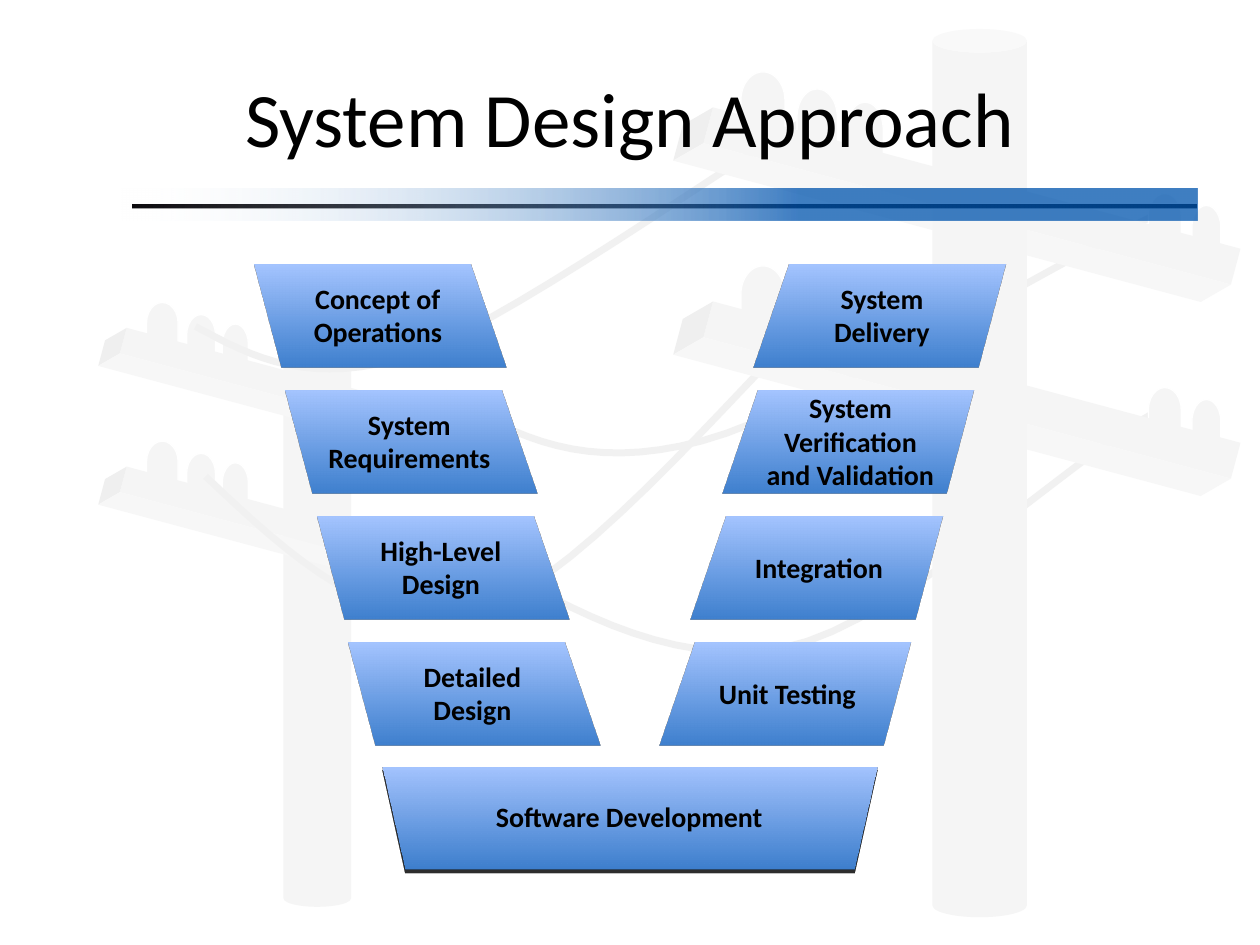
from dataclasses import dataclass

from lxml.etree import SubElement, fromstring
from pptx import Presentation
from pptx.dml.color import RGBColor
from pptx.enum.shapes import MSO_SHAPE as Shape
from pptx.enum.text import MSO_ANCHOR as Anchor, PP_ALIGN as Align
from pptx.oxml.ns import nsdecls, qn
from pptx.util import Inches, Pt

COLORS = {
    "white": "FFFFFF", "black": "000000", "pole": "BFBFBF", "wire": "A6A6A6",
    "rule": "08060A", "band": "0054AF", "step_dark": "3F80CE",
    "step_light": "A4C4FF", "step_edge": "4B7EBC",
}
STEP_FILL = [(0, "step_dark", 100), (100, "step_light", 100)]


@dataclass
class Pole:
    x: float  # left end of the lower arm
    y: float  # top of the lower arm
    scale: float
    post_in_front: bool


@dataclass
class Step:
    text: str
    x: float
    y: float
    flip: str


POLES = [Pole(0.77, 4.08, 0.715, False), Pole(5.33, 2.92, 1, True)]
# Offsets and sizes relative to the arm of a full-size pole
INSULATORS = [(0.5, -0.76, 0.45, 0.35), (0.93, -0.61, 0.45, 0.32),
              (1.31, -0.49, 0.45, 0.29), (3.74, 0.2, 0.35, 0.26),
              (4.07, 0.31, 0.35, 0.23)]
ARM_GAP = 1.54
# Each wire is a start point followed by two cubic curves
WIRES = [
    [(1.63, 3.78), (2.31, 4.42), (3, 5.07), (3.82, 4.84), (4.63, 4.62), (6.13, 2.75), (6.54, 2.45)],
    [(3.56, 4.27), (4.42, 4.79), (5.28, 5.31), (6.22, 5.14), (7.17, 4.96), (8.8, 3.37), (9.25, 3.24)],
    [(1.55, 2.59), (2.01, 2.84), (2.47, 3.08), (3.29, 2.81), (4.11, 2.53), (6.36, 0.89), (6.46, 0.93)],
    [(3.58, 3.16), (4.1, 3.46), (4.63, 3.75), (5.57, 3.5), (6.52, 3.25), (9, 1.72), (9.25, 1.68)],
]
LEFT_STEPS = ["Concept of Operations", "System Requirements", "High-Level Design", "Detailed Design"]
RIGHT_STEPS = ["System Delivery", "System Verification and Validation", "Integration", "Unit Testing"]


def rgb(name: str) -> RGBColor:
    return RGBColor.from_string(COLORS[name])


def set_alpha(sp, percent: float) -> None:
    color = sp._element.spPr.find(qn("a:solidFill"))[0]
    SubElement(color, qn("a:alpha")).set("val", str(int(percent * 1000)))


def set_gradient(sp, stops: list, angle: int) -> None:
    """Fill with (position %, colour name, opacity %) stops."""
    sp.fill.solid()
    items = "".join(
        f'<a:gs pos="{pos * 1000}"><a:srgbClr val="{COLORS[name]}">'
        f'<a:alpha val="{alpha * 1000}"/></a:srgbClr></a:gs>' for pos, name, alpha in stops)
    grad = fromstring(f'<a:gradFill {nsdecls("a")} rotWithShape="1"><a:gsLst>{items}</a:gsLst>'
                      f'<a:lin ang="{angle * 60000}" scaled="0"/></a:gradFill>')
    spPr = sp._element.spPr
    spPr.replace(spPr.find(qn("a:solidFill")), grad)


def add_shape(slide, kind, x: float, y: float, w: float, h: float, *,
              fill: str | None = None, line: str | None = None, rotation: float = 0, flip: str = ""):
    sp = slide.shapes.add_shape(kind, Inches(x), Inches(y), Inches(w), Inches(h))
    sp.shadow.inherit = False
    sp.rotation = rotation
    if fill:
        sp.fill.solid()
        sp.fill.fore_color.rgb = rgb(fill)
    if line:
        sp.line.color.rgb = rgb(line)
        sp.line.width = Pt(0.75)
    else:
        sp.line.fill.background()
    for axis in flip:
        sp._element.spPr.find(qn("a:xfrm")).set(f"flip{axis}", "1")
    return sp


def write(sp, text: str, *, size: float = 16, bold: bool = True, margin: float | None = None) -> None:
    tf = sp.text_frame
    tf.word_wrap = True
    tf.vertical_anchor = Anchor.MIDDLE
    if margin is not None:
        tf.margin_left = tf.margin_right = tf.margin_top = tf.margin_bottom = Inches(margin)
    p = tf.paragraphs[0]
    p.alignment = Align.CENTER
    r = p.add_run()
    r.text = text
    r.font.name, r.font.size, r.font.bold = "Calibri", Pt(size), bold
    r.font.color.rgb = rgb("black")


def add_text(slide, text: str, x: float, y: float, w: float, h: float, **fmt) -> None:
    write(slide.shapes.add_textbox(Inches(x), Inches(y), Inches(w), Inches(h)), text, **fmt)


def draw_post(slide, pole: Pole) -> None:
    s = pole.scale
    add_shape(slide, Shape.CAN, pole.x + 2.07 * s, pole.y - 2.69 * s, 0.75 * s, 7.05 * s, fill="pole")


def draw_pole(slide, pole: Pole) -> None:
    s = pole.scale
    if not pole.post_in_front:
        draw_post(slide, pole)
    for y in (pole.y, pole.y - ARM_GAP * s):
        for dx, dy, w, h in INSULATORS:
            add_shape(slide, Shape.FLOWCHART_DELAY, pole.x + dx * s, y + dy * s, w * s, h * s,
                      fill="pole", line="white", rotation=270)
        arm = add_shape(slide, Shape.CUBE, pole.x, y, 4.53 * s, 0.49 * s,
                        fill="pole", rotation=15, flip="HV")
        arm.adjustments[0] = 0.4
    if pole.post_in_front:
        draw_post(slide, pole)


def curve_point(a, b, c, d, t: float) -> tuple:
    u = 1 - t
    return tuple(Inches(u**3 * i + 3 * u * u * t * j + 3 * u * t * t * k + t**3 * m)
                 for i, j, k, m in zip(a, b, c, d))


def draw_wire(slide, points: list, steps: int = 16) -> None:
    builder = slide.shapes.build_freeform(*(Inches(v) for v in points[0]))
    builder.add_line_segments(
        [curve_point(*points[i:i + 4], n / steps) for i in (0, 3) for n in range(1, steps + 1)],
        close=False)
    sp = builder.convert_to_shape()
    sp.shadow.inherit = False
    sp.fill.background()
    sp.line.color.rgb = rgb("wire")
    sp.line.width = Pt(4)


def tilt(sp) -> None:
    """Lean the shape back with a perspective camera."""
    sp._element.spPr.append(fromstring(
        f'<a:scene3d {nsdecls("a")}><a:camera prst="perspectiveRelaxedModerately"/>'
        '<a:lightRig rig="threePt" dir="t"/></a:scene3d>'))


def add_block(slide, kind, x: float, y: float, w: float, flip: str):
    sp = add_shape(slide, kind, x, y, w, 1, line="step_edge", flip=flip)
    set_gradient(sp, STEP_FILL, 270)
    tilt(sp)
    return sp


def add_drop_shadow(sp) -> None:
    shadow = SubElement(sp._element.spPr.find(qn("a:effectLst")), qn("a:outerShdw"),
                        blurRad=str(Pt(3.1)), dist=str(Pt(1.8)), dir="5400000", rotWithShape="0")
    color = SubElement(shadow, qn("a:srgbClr"), val=COLORS["black"])
    SubElement(color, qn("a:alpha"), val="35000")


def main() -> None:
    prs = Presentation()
    prs.slide_width, prs.slide_height = Inches(10), Inches(7.5)
    slide = prs.slides.add_slide(prs.slide_layouts[6])

    left_pole, right_pole = POLES
    draw_pole(slide, left_pole)
    for wire in WIRES:
        draw_wire(slide, wire)
    draw_pole(slide, right_pole)
    veil = add_shape(slide, Shape.RECTANGLE, 0, 0, 10, 7.5, fill="white", line="white")
    set_alpha(veil, 85)

    rule = add_shape(slide, Shape.RECTANGLE, 1.05, 1.61, 8.45, 0.05)
    set_gradient(rule, [(0, "white", 100), (23, "rule", 100), (75, "rule", 100), (100, "white", 100)], 270)
    band = add_shape(slide, Shape.RECTANGLE, 0.5, 1.5, 9, 0.25)
    set_gradient(band, [(5, "white", 0), (65, "band", 75)], 0)
    add_text(slide, "System Design Approach", 0.5, 0.3, 9, 1.25, size=44, bold=False)

    steps = [Step(text, 2 + 0.25 * i, 2 + i, "H") for i, text in enumerate(LEFT_STEPS)]
    steps += reversed([Step(text, 6 - 0.25 * i, 2 + i, "") for i, text in enumerate(RIGHT_STEPS)])
    for step in steps:
        sp = add_block(slide, Shape.PARALLELOGRAM, step.x, step.y, 2, step.flip)
        write(sp, step.text, margin=0.05)
    base = add_block(slide, Shape.TRAPEZOID, 3, 5.99, 4, "V")
    add_drop_shadow(base)
    add_text(slide, "Software Development", 3.56, 6.29, 2.87, 0.37)

    prs.save("out.pptx")


if __name__ == "__main__":
    main()
